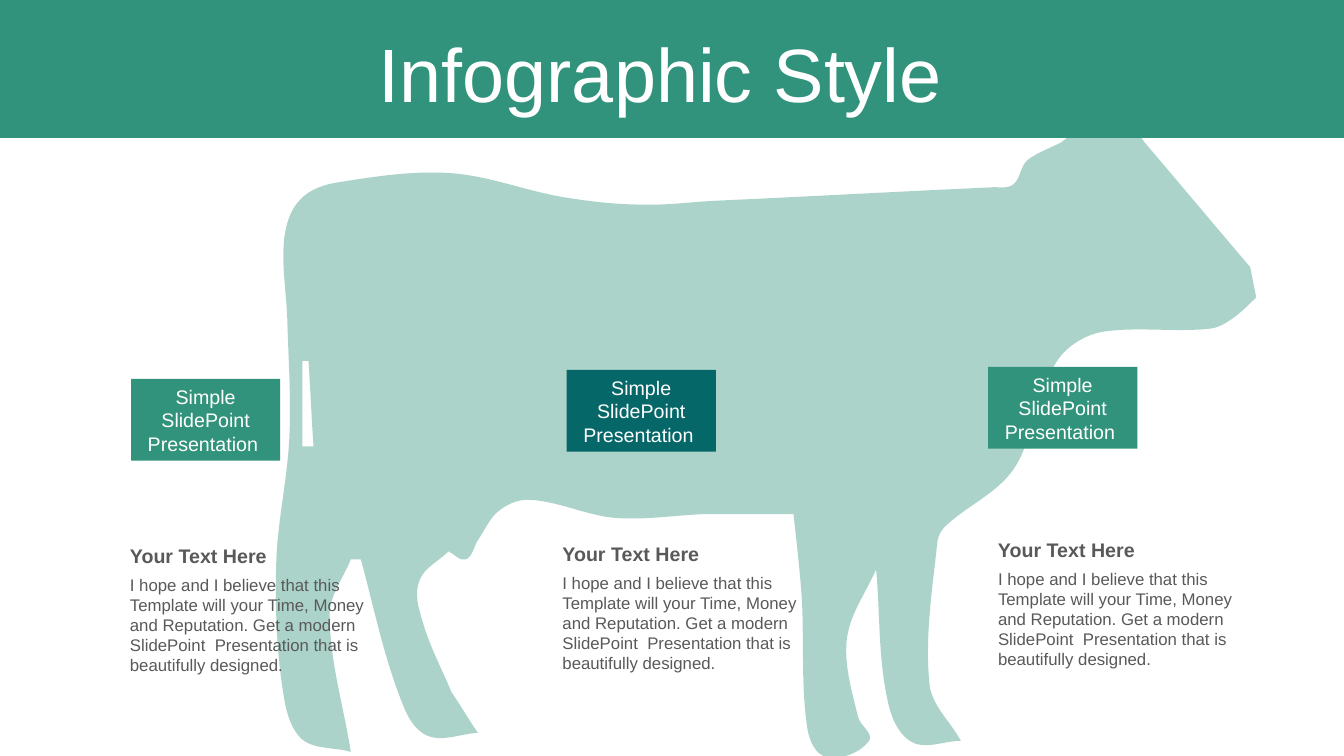
from math import dist

from lxml.etree import SubElement
from pptx import Presentation
from pptx.dml.color import RGBColor
from pptx.enum.shapes import MSO_SHAPE as Preset
from pptx.enum.text import MSO_ANCHOR as Anchor, MSO_AUTO_SIZE as AutoSize, PP_ALIGN as Align
from pptx.oxml.ns import qn
from pptx.util import Inches, Pt

GREEN, TEAL, GREY, WHITE = "31937B", "056768", "595959", "FFFFFF"
BADGE_TEXT = "Simple SlidePoint Presentation "
HEADING = "Your Text Here"
BODY = (
    "I hope and I believe that this Template will your Time, Money and Reputation. "
    "Get a modern SlidePoint  Presentation that is beautifully designed."
)
COLUMNS = [
    {"badge": (1.3, 3.76), "note": (1.19, 5.35), "color": GREEN},
    {"badge": (5.62, 3.67), "note": (5.48, 5.33), "color": TEAL},
    {"badge": (9.8, 3.64), "note": (9.8, 5.29), "color": GREEN},
]
COW_BODY = [
    [(445, 547), (416, 576), (419, 616)],
    [(448, 687)],
    [(474, 727), (422, 729), (395, 687)],
    [(358, 555)],
    [(348, 555), (327, 610)],
    [(348, 746), (298, 732), (279, 674), (274, 560), (287, 435), (285, 316),
     (282, 236), (298, 198), (335, 181), (449, 172), (561, 196), (636, 203)],
    [(714, 199)],
    [(982, 186), (1005, 183), (1019, 159)],
    [(1053, 141)],
    [(1106, 98)],
    [(1135, 141)],
    [(1240, 265)],
    [(1246, 295), (1224, 315), (1201, 326), (1095, 329), (1058, 347), (1035, 385),
     (1005, 466), (940, 520), (930, 536), (922, 679)],
    [(953, 735), (904, 736), (880, 693)],
    [(869, 565), (840, 634), (851, 711), (862, 735), (820, 751), (801, 724), (795, 589)],
    [(787, 510)],
    [(701, 510), (612, 514), (527, 496), (496, 506), (474, 536), (462, 555)],
]
TAIL_GAP = [[(306, 358)], [(300, 358)], [(300, 443)], [(311, 443)]]


def apply(target, values):
    """Set each named attribute of the target."""
    for name, value in values.items():
        setattr(target, name, value)


def inches(*lengths):
    """Turn plain numbers into lengths in inches."""
    return [Inches(length) for length in lengths]


def paint(shape, color):
    """Give a shape a plain fill with no line or shadow."""
    shape.fill.solid()
    shape.fill.fore_color.rgb = RGBColor.from_string(color)
    shape.line.fill.background()
    shape.shadow.inherit = False


def write(shape, text, size, color, bold=False, frame=None, para=None):
    """Write one formatted paragraph into a shape."""
    text_frame = shape.text_frame
    apply(text_frame, {"word_wrap": True, **(frame or {})})
    paragraph = text_frame.paragraphs[0]
    apply(paragraph, para or {})
    span = paragraph.add_run()
    span.text = text
    apply(span.font, {"name": "Arial", "size": Pt(size), "bold": bold})
    span.font.color.rgb = RGBColor.from_string(color)


def handle(point, toward, before, after):
    """Return the curve handle of a point, a third of the way to its neighbour."""
    reach = dist(point, toward) / 3 / dist(before, after)
    return tuple(at + reach * (end - start) for at, start, end in zip(point, before, after))


def smooth(run):
    """Return handles and ends of the curves through a run of points."""
    points = []
    for index in range(len(run) - 1):
        start, end = run[index:index + 2]
        before = run[max(index - 1, 0)]
        after = run[min(index + 2, len(run) - 1)]
        points += [handle(start, end, before, end), handle(end, start, after, start), end]
    return points


def curve_segments(shape):
    """Join every three line segments of a freeform into one cubic curve."""
    lines = list(shape.element.iter(qn("a:lnTo")))
    for trio in zip(lines[::3], lines[1::3], lines[2::3]):
        curve = trio[0].makeelement(qn("a:cubicBezTo"))
        trio[0].addprevious(curve)
        for line in trio:
            curve.append(line[0])
            line.getparent().remove(line)


def add_cow(page, left, top):
    """Draw the translucent cow with the gap beside its tail."""
    builder = page.shapes.build_freeform(*COW_BODY[0][0], scale=Inches(0.01))
    for contour in (COW_BODY, TAIL_GAP):
        if contour is TAIL_GAP:
            builder.move_to(*contour[0][0])
        points = []
        for run, following in zip(contour, contour[1:] + contour[:1]):
            points += smooth(run + following[:1])
        builder.add_line_segments(points, close=False)
    cow = builder.convert_to_shape(*inches(left, top))
    curve_segments(cow)
    paint(cow, GREEN)
    color = next(cow.element.iter(qn("a:srgbClr")))
    SubElement(color, qn("a:alpha"), val="40000")


def add_band(page, box):
    """Draw the header band."""
    paint(page.shapes.add_shape(Preset.RECTANGLE, *inches(*box)), GREEN)


def add_title(page, box):
    """Place the title in front of the header band."""
    title = page.shapes.title
    apply(title, dict(zip(("left", "top", "width", "height"), inches(*box))))
    write(
        title, "Infographic Style", 54, WHITE,
        frame={"auto_size": AutoSize.NONE, "vertical_anchor": Anchor.MIDDLE},
        para={"alignment": Align.CENTER, "line_spacing": 0.9, "space_before": Pt(10)},
    )
    title.element.getparent().append(title.element)


def add_note(page, left, top):
    """Place a heading with its body text."""
    group = page.shapes.add_group_shape()
    body = group.shapes.add_textbox(*inches(left, top + 0.3, 2.59, 1.11))
    write(body, BODY, 12, GREY)
    heading = group.shapes.add_textbox(*inches(left, top, 2.56, 0.34))
    write(heading, HEADING, 14, GREY, bold=True)


def add_badge(page, left, top, color):
    """Place a coloured label."""
    badge = page.shapes.add_shape(Preset.RECTANGLE, *inches(left, top, 1.48, 0.81))
    paint(badge, color)
    write(
        badge, BADGE_TEXT, 14, WHITE,
        frame={"vertical_anchor": Anchor.MIDDLE}, para={"alignment": Align.CENTER},
    )


def main():
    """Build and save the slide."""
    deck = Presentation()
    apply(deck, {"slide_width": Inches(13.33), "slide_height": Inches(7.5)})
    page = deck.slides.add_slide(deck.slide_layouts[5])
    add_band(page, (0, -0.09, 13.36, 1.46))
    add_cow(page, 0, 0)
    for column in COLUMNS:
        add_note(page, *column["note"])
    for column in COLUMNS:
        add_badge(page, *column["badge"], column["color"])
    add_title(page, (0.22, 0.38, 12.66, 0.79))
    deck.save("out.pptx")


if __name__ == "__main__":
    main()
